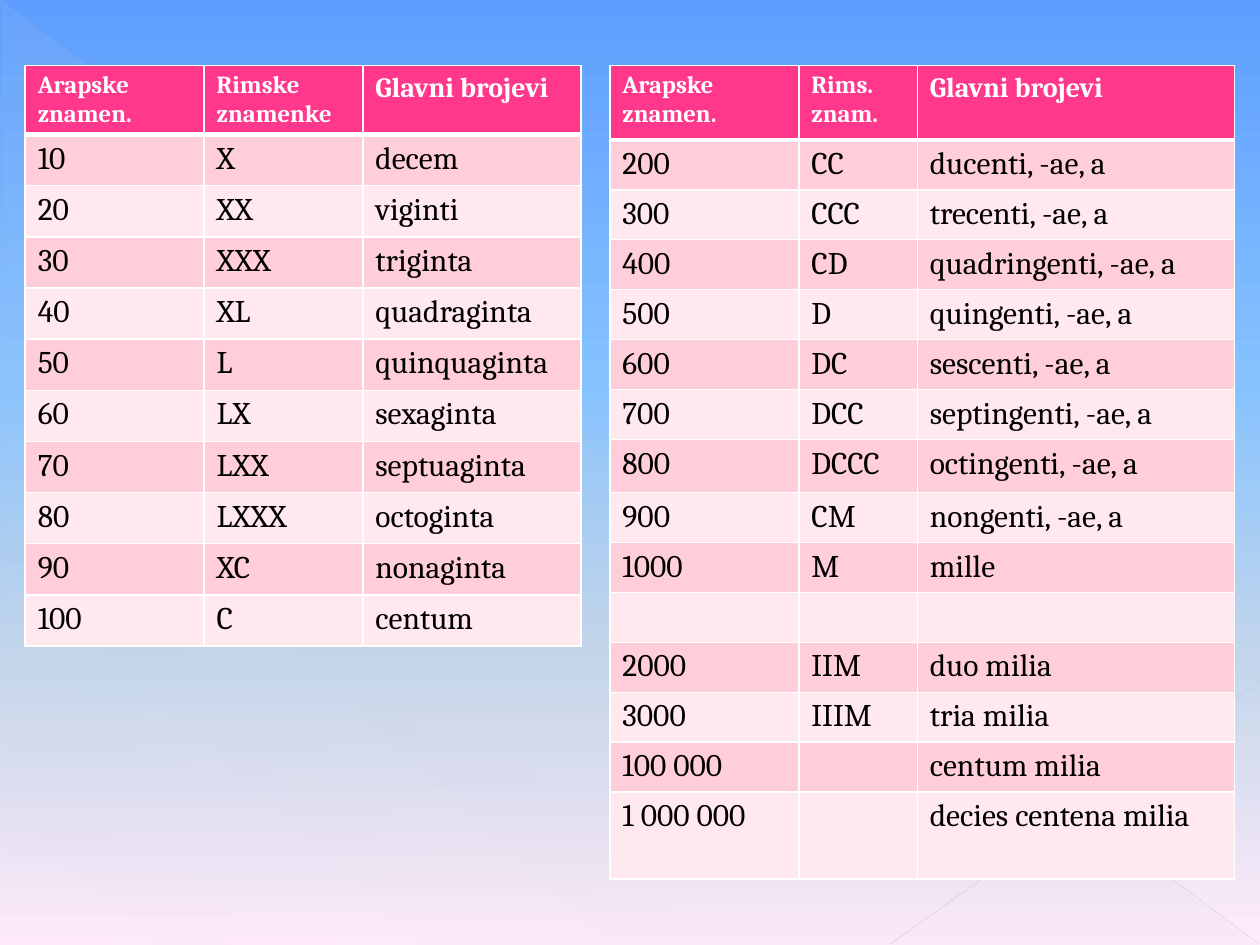
from dataclasses import dataclass

from lxml.etree import SubElement
from pptx import Presentation
from pptx.dml.color import RGBColor
from pptx.enum.shapes import MSO_CONNECTOR, MSO_SHAPE
from pptx.oxml.ns import qn
from pptx.util import Inches, Pt


@dataclass(frozen=True)
class Theme:
    font: str = "Cambria"
    head_sizes: tuple = (14, 14, 16)
    body_size: int = 18
    head_fill: str = "FF388C"
    bands: tuple = ("FFCEDA", "FFE8EE")
    head_text: str = "FFFFFF"
    body_text: str = "000000"
    border: str = "FFFFFF"
    sky: tuple = ((0, "5E9EFF", 100), (40, "85C2FF", 100),
                  (70, "C4D6EB", 100), (100, "FFEBFA", 100))
    veil: tuple = ((0, "D2D2D2", 10), (70, "D2D2D2", 8), (100, "D2D2D2", 1))


THEME = Theme()
SLIDE_W, SLIDE_H = 10, 7.5
TABLE_TOP = 0.52

TENS = [
    ("Arapske znamen.", "Rimske znamenke", "Glavni brojevi"),
    ("10", "X", "decem"),
    ("20", "XX", "viginti"),
    ("30", "XXX", "triginta"),
    ("40", "XL", "quadraginta"),
    ("50", "L", "quinquaginta"),
    ("60", "LX", "sexaginta"),
    ("70", "LXX", "septuaginta"),
    ("80", "LXXX", "octoginta"),
    ("90", "XC", "nonaginta"),
    ("100", "C", "centum"),
]
HUNDREDS = [
    ("Arapske znamen.", "Rims. znam.", "Glavni brojevi"),
    ("200", "CC", "ducenti, -ae, a"),
    ("300", "CCC", "trecenti, -ae, a"),
    ("400", "CD", "quadringenti, -ae, a"),
    ("500", "D", "quingenti, -ae, a"),
    ("600", "DC", "sescenti, -ae, a"),
    ("700", "DCC", "septingenti, -ae, a"),
    ("800", "DCCC", "octingenti, -ae, a"),
    ("900", "CM", "nongenti, -ae, a"),
    ("1000", "M", "mille"),
    ("", "", ""),
    ("2000", "IIM", "duo milia"),
    ("3000", "IIIM", "tria milia"),
    ("100 000", "", "centum milia"),
    ("1 000 000", "", "decies centena milia"),
]


def add_color(parent, color, alpha=100):
    clr = SubElement(parent, qn("a:srgbClr"), val=color)
    if alpha < 100:
        SubElement(clr, qn("a:alpha"), val=str(alpha * 1000))


def set_gradient(fill, element, stops, angle):
    fill.gradient()
    grad = next(element.iter(qn("a:gradFill")))
    for child in list(grad):
        grad.remove(child)
    gs_list = SubElement(grad, qn("a:gsLst"))
    for pos, color, alpha in stops:
        add_color(SubElement(gs_list, qn("a:gs"), pos=str(pos * 1000)), color, alpha)
    SubElement(grad, qn("a:lin"), ang=str(angle * 60000), scaled="0")


def add_veil(s):
    sp = s.shapes.add_shape(MSO_SHAPE.RIGHT_TRIANGLE, Inches(0.01), Inches(0.02),
                            Inches(SLIDE_W - 0.02), Inches(SLIDE_H - 0.02))
    sp.shadow.inherit = False
    sp.line.fill.background()
    set_gradient(sp.fill, sp._element, THEME.veil, 133)


def add_line(s, start, end, color, width, alpha):
    ends = [Inches(v) for v in (*start, *end)]
    cx = s.shapes.add_connector(MSO_CONNECTOR.STRAIGHT, *ends)
    cx.line.width = Pt(width)
    cx.line.color.rgb = RGBColor.from_string(color)
    clr = next(cx.line._ln.iter(qn("a:srgbClr")))
    SubElement(clr, qn("a:alpha"), val=str(alpha * 1000))
    SubElement(cx._element.spPr, qn("a:effectLst"))


def set_borders(cell, bottom, top):
    tcPr = cell._tc.get_or_add_tcPr()
    sides = (("L", 1), ("R", 1), ("T", top), ("B", bottom))
    for i, (side, width) in enumerate(sides):
        ln = SubElement(tcPr, qn(f"a:ln{side}"), w=str(Pt(width)))
        add_color(SubElement(ln, qn("a:solidFill")), THEME.border)
        tcPr.insert(i, ln)


def fill_cell(cell, text, row, col):
    is_head = row == 0
    size = THEME.head_sizes[col] if is_head else THEME.body_size
    color = THEME.head_text if is_head else THEME.body_text
    fill = THEME.head_fill if is_head else THEME.bands[(row - 1) % 2]
    cell.fill.solid()
    cell.fill.fore_color.rgb = RGBColor.from_string(fill)
    set_borders(cell, bottom=3 if is_head else 1, top=3 if row == 1 else 1)
    p = cell.text_frame.paragraphs[0]
    if not text:
        end = SubElement(p._p, qn("a:endParaRPr"), sz=str(size * 100))
        SubElement(end, qn("a:latin"), typeface=THEME.font)
        return
    r = p.add_run()
    r.text = text
    r.font.name = THEME.font
    r.font.size = Pt(size)
    r.font.bold = is_head
    r.font.color.rgb = RGBColor.from_string(color)


def add_number_table(s, left, height, widths, rows, fixed_heights):
    shared = (height - sum(fixed_heights.values())) / (len(rows) - len(fixed_heights))
    frame = s.shapes.add_table(len(rows), len(widths), Inches(left), Inches(TABLE_TOP),
                               Inches(sum(widths)), Inches(height))
    table = frame.table
    table.first_row = table.horz_banding = False
    for column, width in zip(table.columns, widths):
        column.width = Inches(width)
    for i, values in enumerate(rows):
        table.rows[i].height = Inches(fixed_heights.get(i, shared))
        for j, text in enumerate(values):
            fill_cell(table.cell(i, j), text, i, j)


def main():
    prs = Presentation()
    prs.slide_width, prs.slide_height = Inches(SLIDE_W), Inches(SLIDE_H)
    s = prs.slides.add_slide(prs.slide_layouts[6])
    set_gradient(s.background.fill, s._element, THEME.sky, 90)
    add_veil(s)
    add_line(s, (0, 0.01), (9.99, 7.49), "BFBFBF", 0.39, 35)
    add_line(s, (10, 5.41), (7.07, 7.49), "C6C6C6", 0.47, 45)
    add_number_table(s, 0.2, 4.6, (1.42, 1.26, 1.73), TENS, {0: 0.54})
    add_number_table(s, 4.84, 6.46, (1.5, 0.94, 2.52), HUNDREDS,
                     {0: 0.59, 7: 0.42, 14: 0.69})
    prs.save("out.pptx")


if __name__ == "__main__":
    main()
